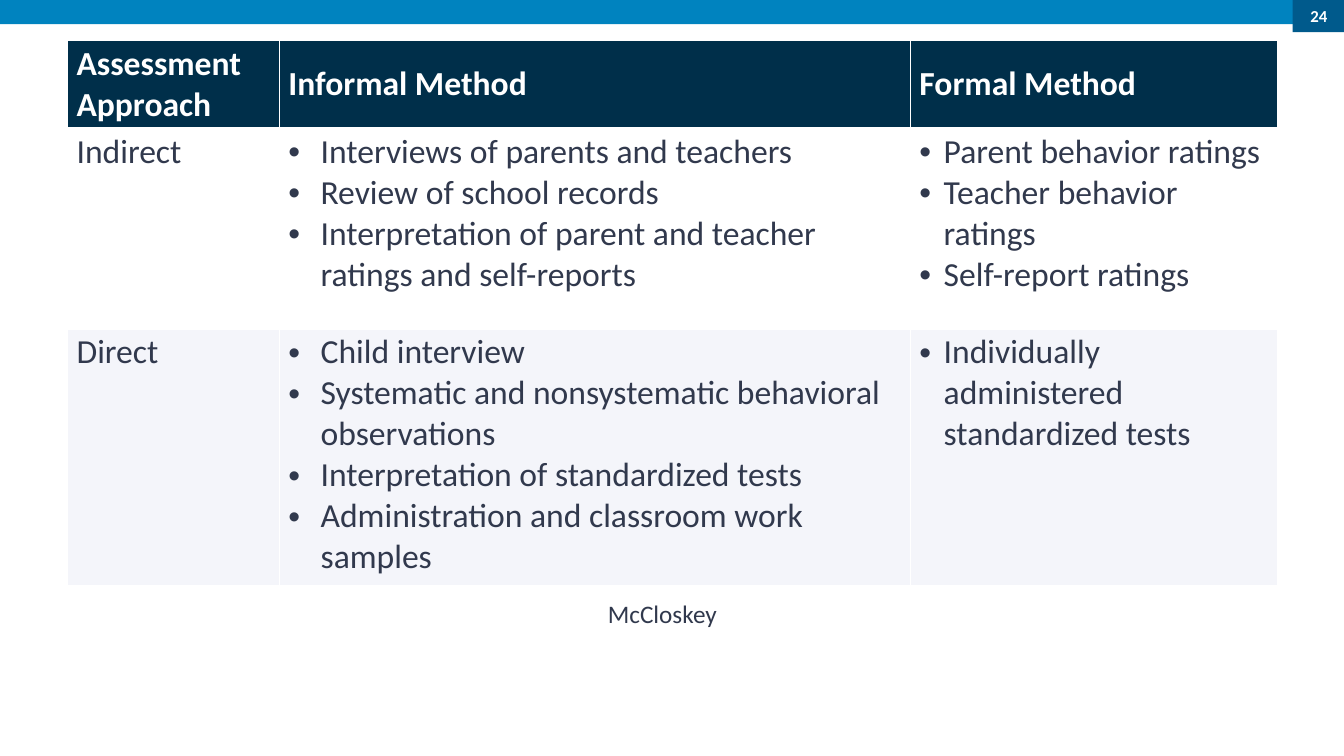
from lxml import etree
from pptx import Presentation
from pptx.dml.color import RGBColor
from pptx.enum.shapes import MSO_SHAPE
from pptx.enum.text import MSO_ANCHOR, MSO_AUTO_SIZE, PP_ALIGN
from pptx.oxml.ns import qn
from pptx.util import Emu, Pt

RECT = MSO_SHAPE.RECTANGLE
MIDDLE, TOP = MSO_ANCHOR.MIDDLE, MSO_ANCHOR.TOP
LEFT, CENTER = PP_ALIGN.LEFT, PP_ALIGN.CENTER
FIT_SHAPE = MSO_AUTO_SIZE.SHAPE_TO_FIT_TEXT

FONT = "Calibri"
WHITE, INK = "FFFFFF", "31394D"
BLUE, DEEP_BLUE, NAVY, PALE = "0083BF", "005A8C", "002F4A", "F4F5FA"

COLS = [210, 626, 364]
ROWS = [87, 199, 254]
INDENTS = [0, 32, 24]
ROW_FILLS = [NAVY, None, PALE]
METHODS = [
    [["Assessment Approach"], ["Informal Method"], ["Formal Method"]],
    [["Indirect"],
     ["Interviews of parents and teachers",
      "Review of school records",
      "Interpretation of parent and teacher ratings and self-reports"],
     ["Parent behavior ratings", "Teacher behavior ratings", "Self-report ratings"]],
    [["Direct"],
     ["Child interview",
      "Systematic and nonsystematic behavioral observations",
      "Interpretation of standardized tests",
      "Administration and classroom work samples"],
     ["Individually administered standardized tests"]],
]


def px(n):
    return Emu(n * 9144)


def rgb(value):
    return RGBColor.from_string(value)


def style(p, size, color, bold=False, align=LEFT):
    p.alignment = align
    for r in p.runs:
        r.font.name = FONT
        r.font.size = Pt(size)
        r.font.bold = bold
        r.font.color.rgb = rgb(color)


def add_bullet(p, indent):
    pPr = p._p.get_or_add_pPr()
    pPr.set("marL", str(px(indent)))
    pPr.set("indent", str(px(-indent)))
    etree.SubElement(pPr, qn("a:buFont"), typeface="Arial")
    etree.SubElement(pPr, qn("a:buChar"), char="•")


def add_borders(cell, top, bottom):
    tcPr = cell._tc.get_or_add_tcPr()
    widths = {"lnL": 0.67, "lnR": 0.67, "lnT": top, "lnB": bottom}
    for i, (side, width) in enumerate(widths.items()):
        ln = etree.Element(qn("a:" + side), w=str(Pt(width)))
        fill = etree.SubElement(ln, qn("a:solidFill"))
        etree.SubElement(fill, qn("a:srgbClr"), val=WHITE)
        tcPr.insert(i, ln)


def add_bar(s, x, y, w, h, color):
    sp = s.shapes.add_shape(RECT, px(x), px(y), px(w), px(h))
    sp.shadow.inherit = False
    sp.fill.solid()
    sp.fill.fore_color.rgb = rgb(color)
    sp.line.fill.background()
    return sp


def add_header(s, x, y, w, h):
    add_bar(s, x, y, w, h, BLUE)
    sp = add_bar(s, x + w - 51, y - 1, 52, 33, DEEP_BLUE)
    tf = sp.text_frame
    tf.margin_left = tf.margin_right = 0
    tf.vertical_anchor = MIDDLE
    tf.text = "24"
    style(tf.paragraphs[0], 12, WHITE, True, CENTER)


def fill_cell(cell, lines, row, col):
    header = row == 0
    cell.margin_left = cell.margin_right = px(9)
    cell.margin_top = cell.margin_bottom = px(3)
    cell.vertical_anchor = MIDDLE if header else TOP
    if ROW_FILLS[row]:
        cell.fill.solid()
        cell.fill.fore_color.rgb = rgb(ROW_FILLS[row])
    else:
        cell.fill.background()
    add_borders(cell, 2 if row == 1 else 0.67, 2 if header else 0.67)
    tf = cell.text_frame
    tf.text = "\n".join(lines)
    for p in tf.paragraphs:
        style(p, 24, WHITE if header else INK, header)
        if not header and INDENTS[col]:
            add_bullet(p, INDENTS[col])


def add_methods_table(s, x, y):
    frame = s.shapes.add_table(len(ROWS), len(COLS), px(x), px(y),
                               px(sum(COLS)), px(sum(ROWS)))
    table = frame.table
    for column, width in zip(table.columns, COLS):
        column.width = px(width)
    for row, height in enumerate(ROWS):
        table.rows[row].height = px(height)
        for col, lines in enumerate(METHODS[row]):
            fill_cell(table.cell(row, col), lines, row, col)


def add_credit(s, x, y, w, h):
    tf = s.shapes.add_textbox(px(x), px(y), px(w), px(h)).text_frame
    tf.word_wrap = True
    tf.auto_size = FIT_SHAPE
    tf.text = "McCloskey"
    style(tf.paragraphs[0], 18, INK)


def main():
    prs = Presentation()
    prs.slide_width, prs.slide_height = px(1333), px(750)
    s = prs.slides.add_slide(prs.slide_layouts[6])
    add_header(s, 0, 0, 1333, 24)
    add_methods_table(s, 67, 40)
    add_credit(s, 593, 589, 151, 40)
    prs.save("out.pptx")


if __name__ == "__main__":
    main()
